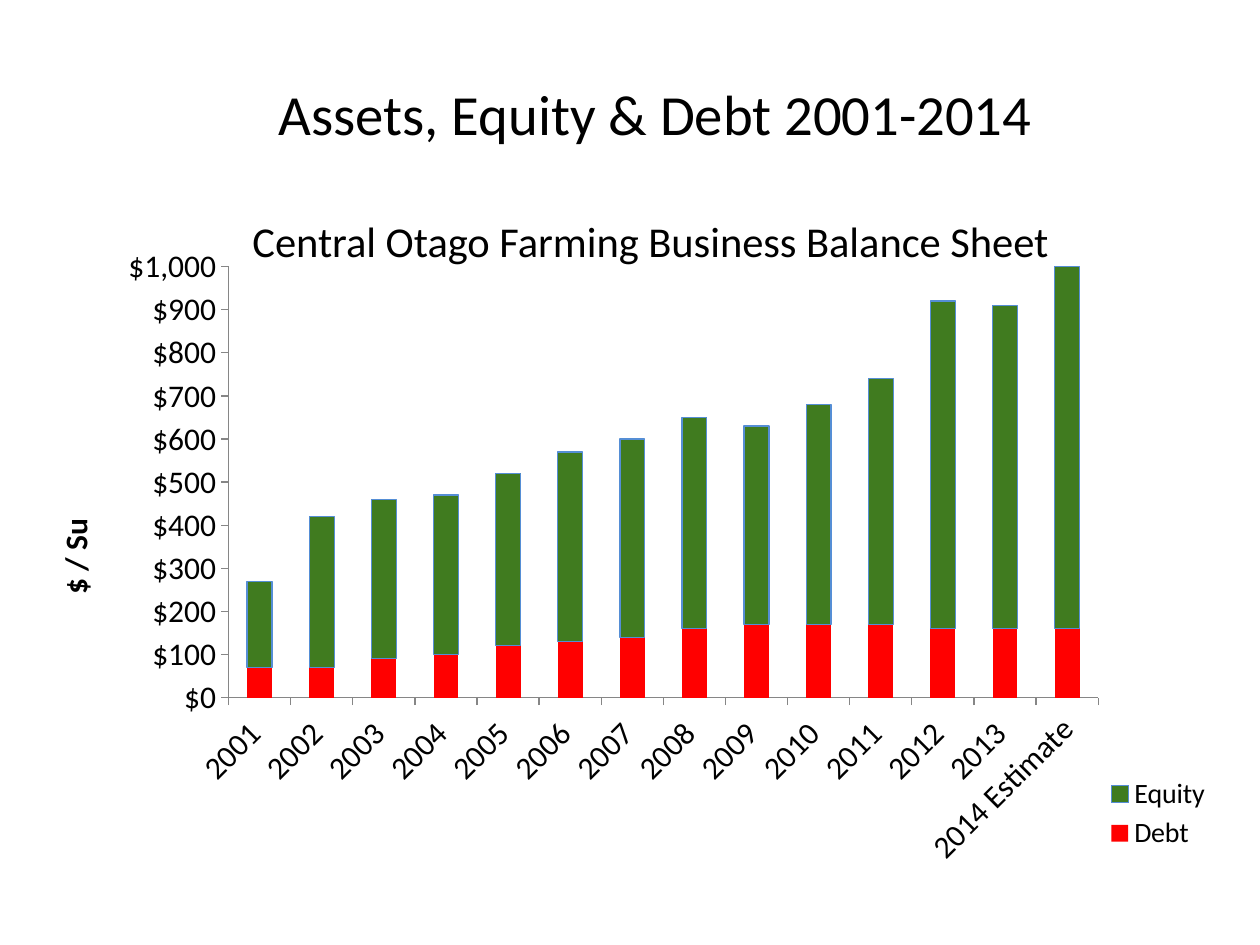
from lxml import etree
from pptx import Presentation
from pptx.chart.data import CategoryChartData
from pptx.dml.color import RGBColor
from pptx.enum.chart import XL_CHART_TYPE, XL_LEGEND_POSITION, XL_TICK_MARK
from pptx.enum.text import MSO_ANCHOR, PP_ALIGN
from pptx.oxml.ns import qn
from pptx.util import Pt

STACKED = XL_CHART_TYPE.COLUMN_STACKED
RIGHT = XL_LEGEND_POSITION.RIGHT
OUT, NONE = XL_TICK_MARK.OUTSIDE, XL_TICK_MARK.NONE
MIDDLE, CENTER = MSO_ANCHOR.MIDDLE, PP_ALIGN.CENTER

COLORS = {"text": "000000", "grid": "FFFFFF", "axis": "868686",
          "Debt": "FF0000", "Equity": "407B1F", "edge": "558ED5"}
YEARS = [f"{year} " for year in range(2001, 2014)] + ["2014 Estimate"]
SERIES = {
    "Debt": [70, 70, 90, 100, 120, 130, 140, 160, 170, 170, 170, 160, 160, 160],
    "Equity": [200, 350, 370, 370, 400, 440, 460, 490, 460, 510, 570, 760, 750, 860],
}
CHART = (14.4, 134, 697.6, 368.6)


def assign(item, values):
    """Set each named value on the item."""
    for name, value in values.items():
        setattr(item, name, value)


def color(name):
    """Return the named colour."""
    return RGBColor.from_string(COLORS[name])


def stroke(line, name):
    """Draw a thin line in the named colour."""
    line.width = Pt(0.75)
    line.color.rgb = color(name)


def turn(node, angle):
    """Rotate the text of a chart part by whole degrees."""
    body = node.find(".//" + qn("a:bodyPr"))
    body.set("rot", str(angle * 60000))
    body.set("vert", "horz")


def place(node, index, **box):
    """Fix a chart part at points from the chart corner."""
    for old in node.findall(qn("c:layout")):
        node.remove(old)
    layout = etree.Element(qn("c:layout"))
    manual = etree.SubElement(layout, qn("c:manualLayout"))
    modes = {"xMode": "edge", "yMode": "edge"}
    if index == 0:
        modes = {"layoutTarget": "inner", **modes}
    wide, high = CHART[2:]
    parts = {name: size / (wide if name in "xw" else high)
             for name, size in box.items()}
    for name, value in {**modes, **parts}.items():
        etree.SubElement(manual, qn("c:" + name)).set("val", str(value))
    node.insert(index, layout)


class Deck:
    """Hold the text style and the current slide."""

    def __init__(self, face):
        """Start a deck with one titled slide."""
        self.face = face
        self.show = Presentation()
        assign(self.show, {"slide_width": Pt(720), "slide_height": Pt(540)})
        self.slide = self.show.slides.add_slide(self.show.slide_layouts[5])

    def style(self, font, size, bold=False):
        """Apply the deck style to a font."""
        assign(font, {"name": self.face, "size": Pt(size), "bold": bold})
        font.color.rgb = color("text")

    def title(self, lines, box, gap):
        """Fill the title with lines of given sizes."""
        shape = self.slide.shapes.title
        assign(shape, dict(zip(("left", "top", "width", "height"), map(Pt, box))))
        frame = shape.text_frame
        assign(frame, {"word_wrap": True, "vertical_anchor": MIDDLE,
                       "margin_top": Pt(3.6), "margin_bottom": Pt(50.4)})
        frame.text = "\n".join(text for text, size in lines)
        for spot, (para, (text, size)) in enumerate(zip(frame.paragraphs, lines)):
            assign(para, {"alignment": CENTER, "space_before": Pt(gap * spot)})
            self.style(para.runs[0].font, size)

    def axis(self, axis):
        """Format the ticks, labels and line of an axis."""
        assign(axis, {"major_tick_mark": OUT, "minor_tick_mark": NONE})
        self.style(axis.tick_labels.font, 18)
        stroke(axis.format.line, "axis")

    def chart(self):
        """Add the stacked balance sheet chart."""
        data = CategoryChartData()
        data.categories = YEARS
        for name, values in SERIES.items():
            data.add_series(name, values)
        chart = self.slide.shapes.add_chart(STACKED, *map(Pt, CHART), data).chart
        assign(chart, {"has_title": False, "has_legend": True})
        self.style(chart.font, 10)

        plot = chart.plots[0]
        assign(plot, {"gap_width": 150, "overlap": 100, "vary_by_categories": False})
        for series in plot.series:
            series.format.fill.solid()
            series.format.fill.fore_color.rgb = color(series.name)
        stroke(plot.series[1].format.line, "edge")
        area = chart._chartSpace.find(".//" + qn("c:plotArea"))
        place(area, 0, x=116.2, y=18.4, w=497, h=246.3)

        years, money = chart.category_axis, chart.value_axis
        for axis in (years, money):
            self.axis(axis)
        turn(years._element, -45)
        assign(money, {"minimum_scale": 0, "maximum_scale": 1000, "major_unit": 100,
                       "has_major_gridlines": True})
        assign(money.tick_labels, {"number_format": "\\$#,##0",
                                   "number_format_is_linked": False})
        stroke(money.major_gridlines.format.line, "grid")

        label = money.axis_title
        label.text_frame.text = "$ / Su"
        self.style(label.text_frame.paragraphs[0].runs[0].font, 18, True)
        turn(label._element, -90)
        place(label._element, 1, x=12.9, y=159.3)

        legend = chart.legend
        assign(legend, {"position": RIGHT, "include_in_layout": False})
        self.style(legend.font, 16)
        place(legend._element, 1, x=609.4, y=307, w=76, h=48)


def main():
    """Build and save the slide."""
    deck = Deck("Calibri")
    deck.title([("Assets, Equity & Debt 2001-2014", 32.4),
                ("Central Otago Farming Business Balance Sheet ", 24.3)],
               (60, 77, 629, 90), 39)
    deck.chart()
    deck.show.save("out.pptx")


if __name__ == "__main__":
    main()
